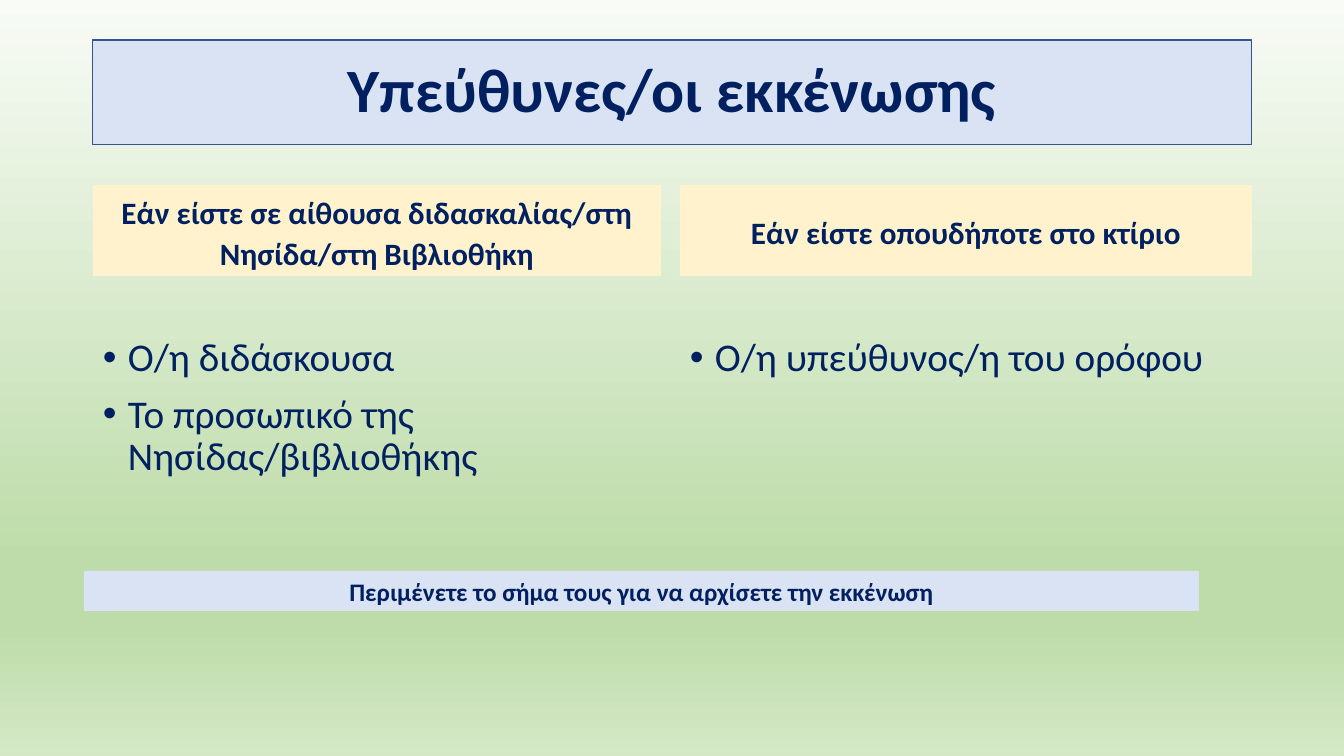
"""Build the slide on the people responsible for an evacuation."""
import pptx
import pptx.dml.color
import pptx.enum.shapes
import pptx.enum.text
import pptx.oxml.ns
import pptx.util
from lxml import etree

TITLE = "Υπεύθυνες/οι εκκένωσης"
COLUMNS = [
    {"left": 93, "width": 568,
     "heading": "Εάν είστε σε αίθουσα διδασκαλίας/στη Νησίδα/στη Βιβλιοθήκη",
     "people": ["Ο/η διδάσκουσα", "Το προσωπικό της Νησίδας/βιβλιοθήκης"]},
    {"left": 680, "width": 572,
     "heading": "Εάν είστε οπουδήποτε στο κτίριο",
     "people": ["Ο/η υπεύθυνος/η του ορόφου"]},
]
NOTICE = "Περιμένετε το σήμα τους για να αρχίσετε την εκκένωση"

COLORS = {"navy": "002060", "blue": "DAE3F3", "outline": "325491", "cream": "FFF2CC"}
BACKGROUND = [(0, "F8FBF6"), (74, "BEDCAA"), (83, "BEDCAA"), (100, "D4E8C6")]
TITLE_BOX = (93, 40, 1159, 105)
NOTICE_BOX = (84, 571, 1115, 40)
HEADING_TOP, HEADING_HEIGHT = 185, 91
LIST_TOP, LIST_HEIGHT = 333, 349
EMU_PER_PX = 914400 / 100.8
BULLET_INDENT = 25

ALIGN = pptx.enum.text.PP_ALIGN
ANCHOR = pptx.enum.text.MSO_ANCHOR
TITLE_FORMAT = {"alignment": ALIGN.CENTER, "line_spacing": 0.9}
HEADING_FORMAT = {"alignment": ALIGN.CENTER, "line_spacing": 1.1}
LIST_FORMAT = {"alignment": ALIGN.LEFT, "line_spacing": 0.9,
               "space_before": pptx.util.Pt(10)}
NOTICE_FORMAT = {"alignment": ALIGN.CENTER}


def px(length):
    return pptx.util.Emu(round(length * EMU_PER_PX))


def rgb(name):
    return pptx.dml.color.RGBColor.from_string(COLORS[name])


def set_attributes(target, values):
    for name, value in values.items():
        setattr(target, name, value)


def place(shape, box):
    set_attributes(shape, dict(zip(("left", "top", "width", "height"), map(px, box))))


def fill_shape(shape, color):
    shape.fill.solid()
    shape.fill.fore_color.rgb = rgb(color)


def write(shape, lines, size, bold, paragraph_format, anchor):
    frame = shape.text_frame
    set_attributes(frame, {"word_wrap": True, "vertical_anchor": anchor,
                           "auto_size": pptx.enum.text.MSO_AUTO_SIZE.NONE})
    frame.text = "\n".join(lines)
    for paragraph in frame.paragraphs:
        set_attributes(paragraph, paragraph_format)
        font = paragraph.runs[0].font
        set_attributes(font, {"name": "Calibri", "size": pptx.util.Pt(size), "bold": bold})
        font.color.rgb = rgb("navy")


def add_bullets(shape):
    for paragraph in shape.text_frame.paragraphs:
        properties = paragraph._p.get_or_add_pPr()
        properties.set("marL", str(px(BULLET_INDENT)))
        properties.set("indent", str(-px(BULLET_INDENT)))
        for tag, attribute, value in (("a:buFont", "typeface", "Arial"),
                                      ("a:buChar", "char", "•")):
            bullet = etree.SubElement(properties, pptx.oxml.ns.qn(tag))
            bullet.set(attribute, value)


def add_band(slide, box, color, text, size, paragraph_format):
    band = slide.shapes.add_shape(
        pptx.enum.shapes.MSO_SHAPE.RECTANGLE, *map(px, box))
    band.shadow.inherit = False
    band.line.fill.background()
    fill_shape(band, color)
    write(band, [text], size, True, paragraph_format, ANCHOR.MIDDLE)


def paint_background(slide):
    fill = slide.background.fill
    fill.gradient()
    fill.gradient_angle = 270
    qn = pptx.oxml.ns.qn
    stops = slide._element.find(".//" + qn("a:gsLst"))
    for stop in list(stops):
        stops.remove(stop)
    for percent, color in BACKGROUND:
        stop = etree.SubElement(stops, qn("a:gs"), pos=str(percent * 1000))
        etree.SubElement(stop, qn("a:srgbClr"), val=color)


def main():
    presentation = pptx.Presentation()
    presentation.slide_width, presentation.slide_height = px(1344), px(756)
    slide = presentation.slides.add_slide(presentation.slide_layouts[5])
    paint_background(slide)

    title = slide.shapes.title
    place(title, TITLE_BOX)
    fill_shape(title, "blue")
    title.line.color.rgb = rgb("outline")
    title.line.width = pptx.util.Pt(0.75)
    write(title, [TITLE], 44, True, TITLE_FORMAT, ANCHOR.MIDDLE)

    for column in COLUMNS:
        left, width = column["left"], column["width"]
        add_band(slide, (left, HEADING_TOP, width, HEADING_HEIGHT), "cream",
                 column["heading"], 22.2, HEADING_FORMAT)
        people = slide.shapes.add_textbox(
            *map(px, (left, LIST_TOP, width, LIST_HEIGHT)))
        write(people, column["people"], 28, False, LIST_FORMAT, ANCHOR.TOP)
        add_bullets(people)

    add_band(slide, NOTICE_BOX, "blue", NOTICE, 18, NOTICE_FORMAT)
    presentation.save("out.pptx")


if __name__ == "__main__":
    main()
